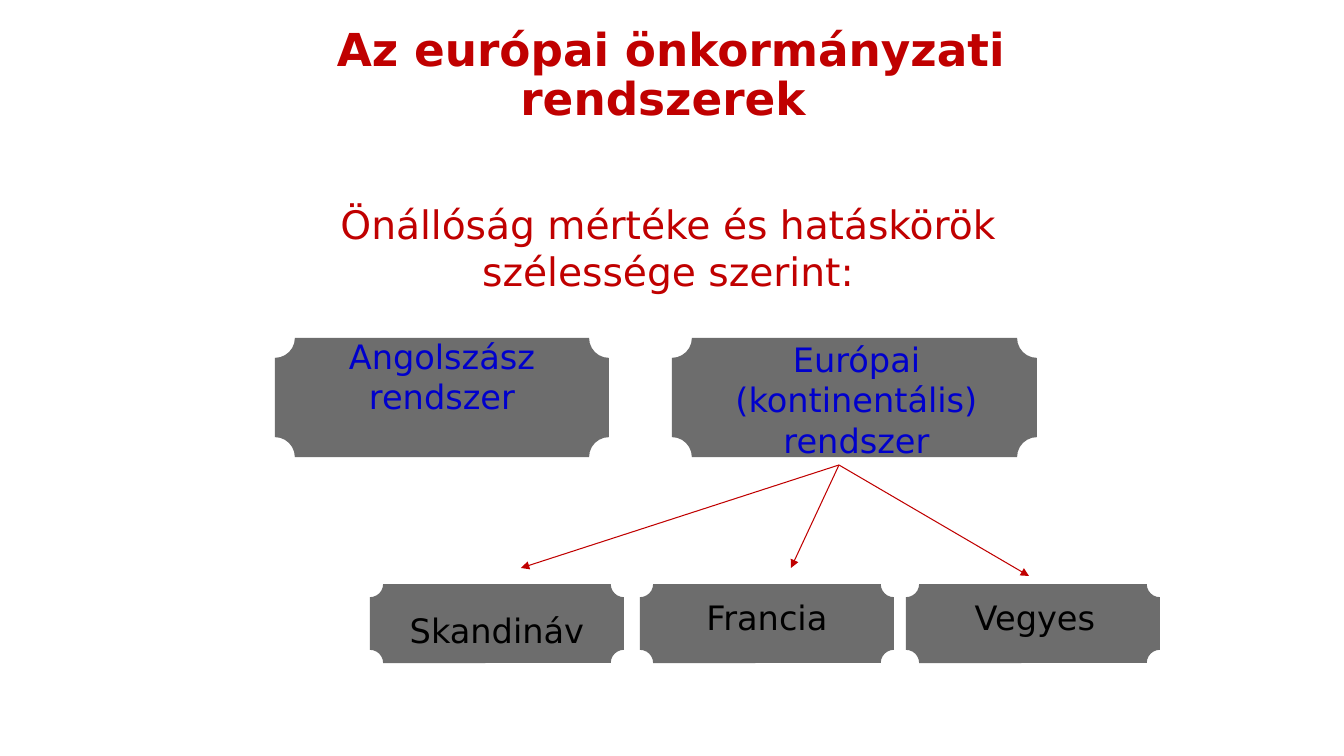
import pptx
import pptx.util
import pptx.dml.color
import pptx.enum.shapes
import pptx.enum.text
import pptx.oxml
import pptx.oxml.ns

FONT = "DejaVu Sans"
RED, BLUE, BLACK, GRAY = "C00000", "0000CC", "000000", "6D6D6D"


def px(num):
    return pptx.util.Emu(round(num * 914400 / 100.8))


def tint(code):
    return pptx.dml.color.RGBColor.from_string(code)


def write(shape, words, size, color, bold=False):
    frame = shape.text_frame
    frame.word_wrap = True
    frame.text = words
    para = frame.paragraphs[0]
    para.alignment = pptx.enum.text.PP_ALIGN.CENTER
    font = para.runs[0].font
    font.name, font.size, font.bold = FONT, pptx.util.Pt(size), bold
    font.color.rgb = tint(color)
    return para


def head(slide, box, words):
    title = slide.shapes.title
    title.left, title.top, title.width, title.height = map(px, box)
    para = write(title, words, 32.4, RED, True)
    para.line_spacing = 0.9
    title.text_frame.vertical_anchor = pptx.enum.text.MSO_ANCHOR.MIDDLE


def label(slide, box, words, size, color):
    text = slide.shapes.add_textbox(*map(px, box))
    write(text, words, size, color)


def plaque(slide, box, words, color, shift, drop):
    left, top, width, height = box
    kind = pptx.enum.shapes.MSO_SHAPE.PLAQUE
    shape = slide.shapes.add_shape(kind, *map(px, box))
    shape.adjustments[0] = 0.167
    shape.shadow.inherit = False
    shape.fill.solid()
    shape.fill.fore_color.rgb = tint(GRAY)
    shape.line.fill.background()
    spot = (left + shift, top + drop, width, height)
    label(slide, spot, words, 24, color)


def arrow(slide, start, end):
    kind = pptx.enum.shapes.MSO_CONNECTOR.STRAIGHT
    line = slide.shapes.add_connector(kind, *map(px, start + end))
    line.line.color.rgb = tint(RED)
    line.line.width = pptx.util.Pt(0.75)
    space = pptx.oxml.ns.nsdecls("a")
    props = line.element.spPr
    tail = pptx.oxml.parse_xml(f'<a:tailEnd {space} type="triangle"/>')
    props.get_or_add_ln().append(tail)
    props.append(pptx.oxml.parse_xml(f'<a:effectLst {space}/>'))


def main():
    deck = pptx.Presentation()
    deck.slide_width, deck.slide_height = px(1344), px(756)
    slide = deck.slides.add_slide(deck.slide_layouts[5])
    head(slide, (274, 45, 794, 62), "Az európai önkormányzati rendszerek ")
    label(slide, (238, 195, 860, 105),
          "Önállóság mértéke és hatáskörök szélessége szerint:", 28, RED)
    for left, width, words, shift, drop in (
            (275, 334, "Angolszász rendszer", 0, -7),
            (672, 365, "Európai (kontinentális) rendszer", 2, -4)):
        plaque(slide, (left, 338, width, 119), words, BLUE, shift, drop)
    for left, words, shift, drop, end in (
            (370, "Skandináv", 0, 21, (521, 568)),
            (640, "Francia", 0, 8, (791, 568)),
            (906, "Vegyes", 2, 8, (1029, 576))):
        plaque(slide, (left, 584, 254, 79), words, BLACK, shift, drop)
        arrow(slide, (839, 465), end)
    deck.save("out.pptx")


if __name__ == "__main__":
    main()
